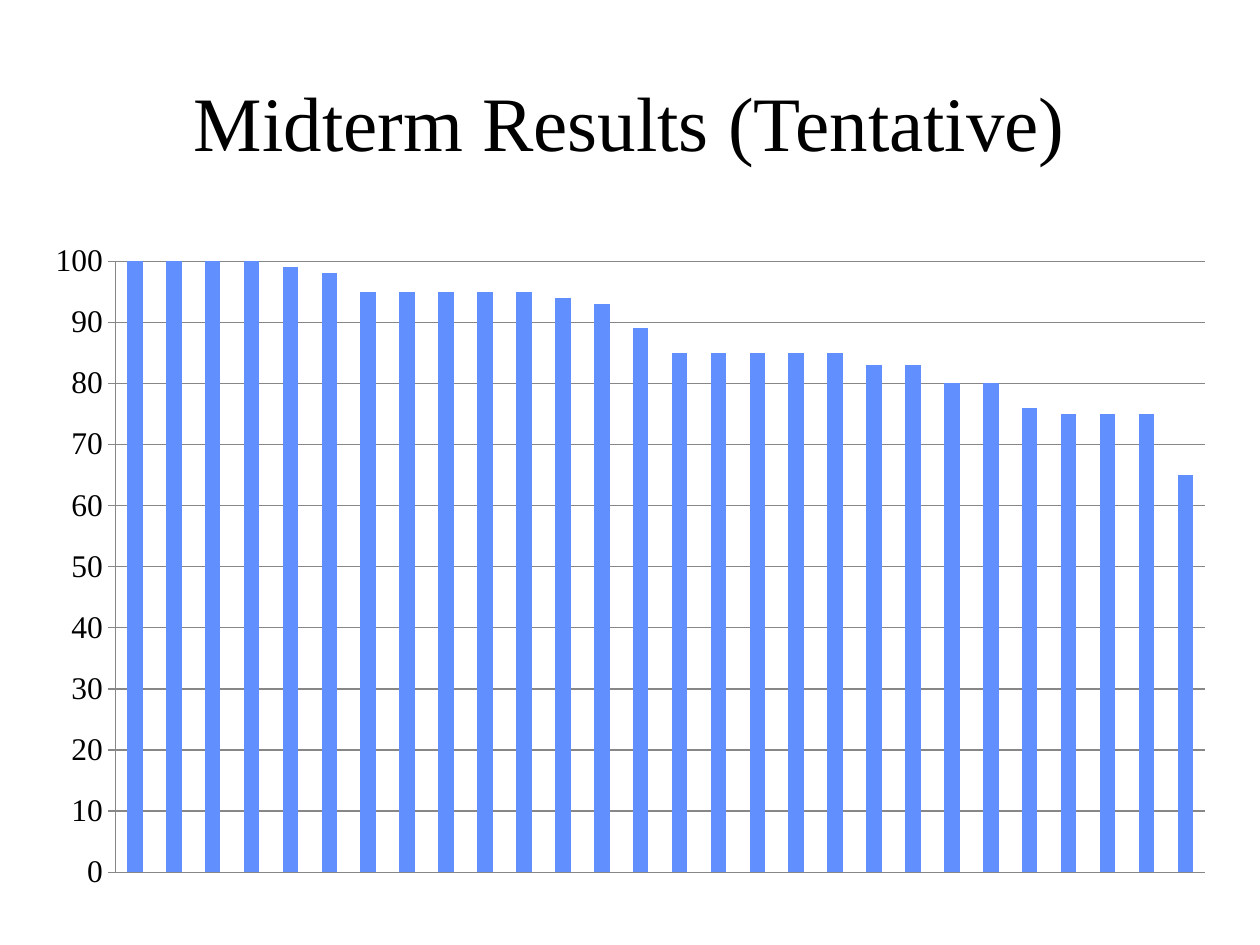
"""Build a slide with a column chart of midterm results."""
from pptx import Presentation
from pptx.chart.data import CategoryChartData
from pptx.dml.color import RGBColor
from pptx.enum.chart import XL_CHART_TYPE as ChartType, XL_TICK_MARK as Tick
from pptx.enum.text import MSO_ANCHOR as Anchor, PP_ALIGN as Align
from pptx.util import Cm, Pt

TITLE = "Midterm Results (Tentative)"
SCORES = [100, 100, 100, 100, 99, 98, 95, 95, 95, 95, 95, 94, 93, 89,
          85, 85, 85, 85, 85, 83, 83, 80, 80, 76, 75, 75, 75, 65]
FONT = "Times New Roman"
BLACK, BLUE, GRAY = "000000", "618FFD", "878787"
TITLE_BOX = (1.9, 0.85, 21.6, 3.17)
CHART_BOX = (0.64, 4.65, 24.13, 13.55)


def color(target, value):
    target.rgb = RGBColor.from_string(value)


def style_font(font, size):
    font.name, font.size = FONT, Pt(size)
    color(font.color, BLACK)


def add_title(s):
    tf = s.shapes.add_textbox(*map(Cm, TITLE_BOX)).text_frame
    tf.word_wrap, tf.vertical_anchor = True, Anchor.MIDDLE
    p = tf.paragraphs[0]
    p.alignment = Align.CENTER
    r = p.add_run()
    r.text = TITLE
    style_font(r.font, 44)


def add_scores(s):
    data = CategoryChartData()
    data.categories = [str(i) for i in range(1, len(SCORES) + 1)]
    data.add_series("Series 1", SCORES)
    chart = s.shapes.add_chart(ChartType.COLUMN_CLUSTERED, *map(Cm, CHART_BOX), data).chart
    chart.has_legend = chart.has_title = False
    style_font(chart.font, 10)
    chart.category_axis.visible = False

    axis = chart.value_axis
    axis.minimum_scale, axis.maximum_scale, axis.major_unit = 0, 100, 10
    axis.major_tick_mark, axis.minor_tick_mark = Tick.OUTSIDE, Tick.NONE
    style_font(axis.tick_labels.font, 18)
    axis.has_major_gridlines = True
    for fmt in (axis.format, axis.major_gridlines.format):
        fmt.line.width = Pt(0.75)
        color(fmt.line.color, GRAY)

    plot = chart.plots[0]
    plot.gap_width, plot.vary_by_categories = 150, False
    fill = plot.series[0].format.fill
    fill.solid()
    color(fill.fore_color, BLUE)


def main():
    prs = Presentation()
    prs.slide_width, prs.slide_height = Cm(25.4), Cm(19.05)
    s = prs.slides.add_slide(prs.slide_layouts[6])
    add_title(s)
    add_scores(s)
    prs.save("out.pptx")


if __name__ == "__main__":
    main()
